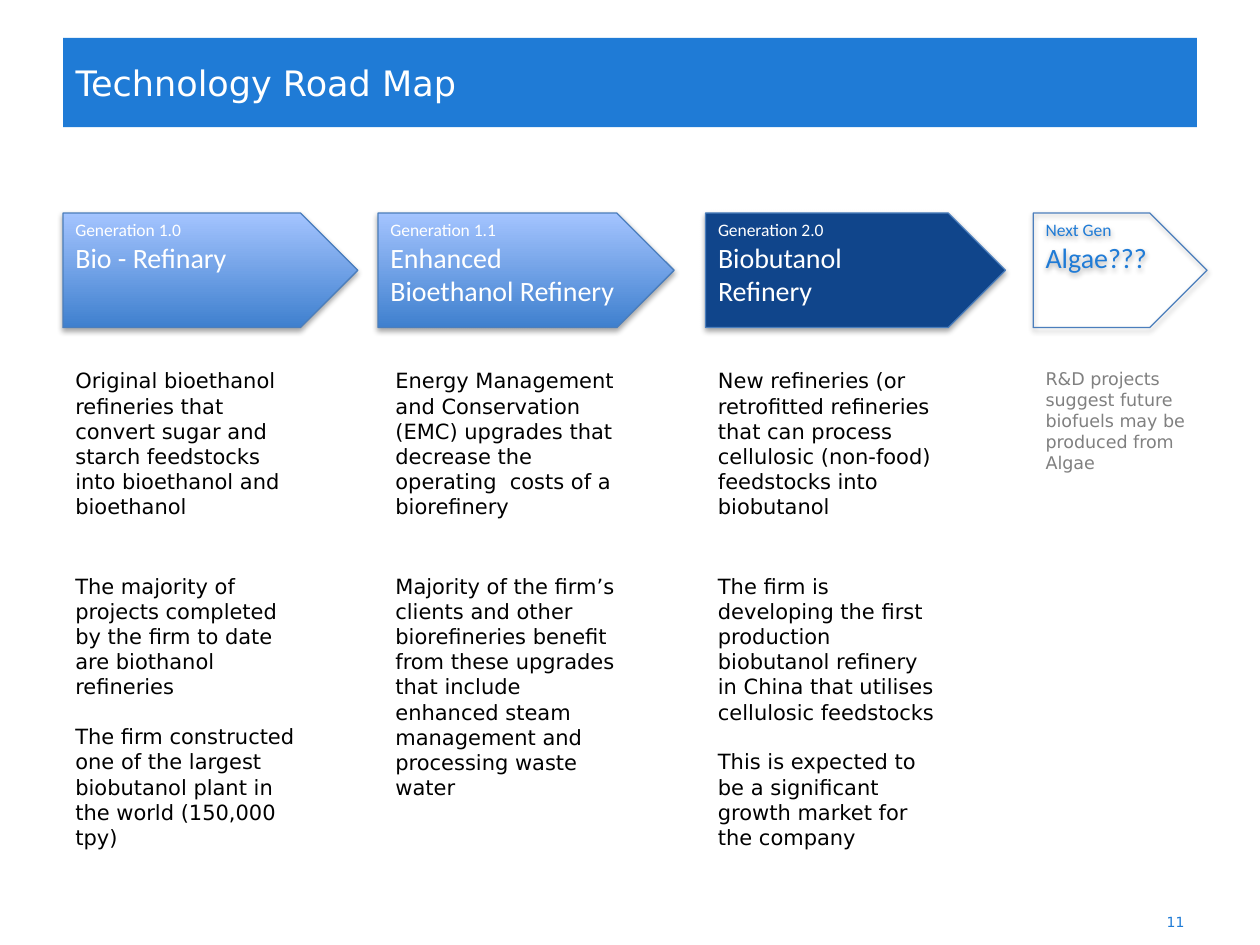
from lxml import etree
from pptx import Presentation
from pptx.dml.color import RGBColor
from pptx.enum import shapes, text
from pptx.oxml import ns
from pptx.util import Inches, Pt

BLUE = RGBColor(0x1F, 0x7B, 0xD6)
NAVY = RGBColor(0x10, 0x45, 0x8B)
OUTLINE = RGBColor(0x4B, 0x7E, 0xBC)
GRADIENT = (RGBColor(0x3F, 0x80, 0xCE), RGBColor(0xA4, 0xC4, 0xFF))
WHITE = RGBColor(0xFF, 0xFF, 0xFF)
BLACK = RGBColor(0, 0, 0)
GREY = RGBColor(0x80, 0x80, 0x80)

BODY_FONT = "DejaVu Sans"
ARROW_FONT = "Calibri"

ARROW_TOP, ARROW_HEIGHT = 1.69, 0.91
DESCRIPTION_TOP, STATUS_TOP = 2.87, 4.5

# left, arrow width, fill, text colour, arrow lines
ARROWS = [
    (0.5, 2.34, GRADIENT, WHITE, ["Generation 1.0", "Bio - Refinary"]),
    (3, 2.35, GRADIENT, WHITE,
     ["Generation 1.1", "Enhanced ", "Bioethanol Refinery"]),
    (5.6, 2.38, NAVY, WHITE, ["Generation 2.0", "Biobutanol", "Refinery"]),
    (8.2, 1.38, None, BLUE, ["Next Gen", "Algae???"]),
]

# left, description, status paragraphs
COLUMNS = [
    (0.5,
     "Original bioethanol refineries that convert sugar and starch "
     "feedstocks into bioethanol and bioethanol",
     ["The majority of projects completed by the firm to date are biothanol "
      "refineries",
      "The firm constructed one of the largest biobutanol plant in the world "
      "(150,000 tpy)"]),
    (3.04,
     "Energy Management and Conservation (EMC) upgrades that decrease the "
     "operating  costs of a biorefinery",
     ["Majority of the firm’s clients and other biorefineries benefit from "
      "these upgrades that include enhanced steam management and processing "
      "waste water"]),
    (5.6,
     "New refineries (or retrofitted refineries that can process cellulosic "
     "(non-food) feedstocks into biobutanol",
     ["The firm is developing the first production biobutanol refinery in "
      "China that utilises cellulosic feedstocks",
      "This is expected to be a significant growth market for the company"]),
]


def style_paragraph(paragraph, size, color, font=BODY_FONT,
                    align=text.PP_ALIGN.LEFT):
    paragraph.alignment = align
    paragraph.font.size = Pt(size)
    paragraph.font.name = font
    paragraph.font.color.rgb = color


def add_title(slide, left, top, width, height):
    title = slide.shapes.title
    title.left, title.top = Inches(left), Inches(top)
    title.width, title.height = Inches(width), Inches(height)
    title.fill.solid()
    title.fill.fore_color.rgb = BLUE
    frame = title.text_frame
    frame.text = "Technology Road Map"
    frame.auto_size = text.MSO_AUTO_SIZE.NONE
    frame.vertical_anchor = text.MSO_ANCHOR.MIDDLE
    style_paragraph(frame.paragraphs[0], 20, WHITE)


def add_soft_shadow(shape):
    shape.shadow.inherit = False
    effects = shape._element.spPr.find(ns.qn("a:effectLst"))
    shadow = etree.SubElement(effects, ns.qn("a:outerShdw"), blurRad="40000",
                              dist="23000", dir="5400000", rotWithShape="0")
    color = etree.SubElement(shadow, ns.qn("a:srgbClr"), val="000000")
    etree.SubElement(color, ns.qn("a:alpha"), val="35000")


def fill_arrow(fill, colors):
    """Fill with a gradient for a pair of colours, else solid or none."""
    if colors is None:
        fill.background()
    elif colors is GRADIENT:
        fill.gradient()
        fill.gradient_angle = 90
        for stop, color, position in zip(fill.gradient_stops, colors, (0, 1)):
            stop.color.rgb = color
            stop.position = position
    else:
        fill.solid()
        fill.fore_color.rgb = colors


def add_arrow(slide, left, width, fill, color, lines):
    arrow = slide.shapes.add_shape(
        shapes.MSO_SHAPE.PENTAGON, Inches(left), Inches(ARROW_TOP),
        Inches(width), Inches(ARROW_HEIGHT))
    fill_arrow(arrow.fill, fill)
    arrow.line.color.rgb = OUTLINE
    arrow.line.width = Pt(0.75)
    add_soft_shadow(arrow)
    frame = arrow.text_frame
    frame.vertical_anchor = text.MSO_ANCHOR.TOP
    frame.text = "\n".join(lines)
    for index, paragraph in enumerate(frame.paragraphs):
        style_paragraph(paragraph, 16 if index else 10, color, ARROW_FONT)


def add_text(slide, left, top, width, height, paragraphs, size=12,
             color=BLACK, align=text.PP_ALIGN.LEFT,
             anchor=text.MSO_ANCHOR.TOP):
    box = slide.shapes.add_textbox(Inches(left), Inches(top), Inches(width),
                                   Inches(height))
    frame = box.text_frame
    frame.word_wrap = True
    frame.vertical_anchor = anchor
    frame.text = "\n".join(paragraphs)
    for index, paragraph in enumerate(frame.paragraphs):
        style_paragraph(paragraph, size, color, align=align)
        if index:
            paragraph.space_before = Pt(14)


def main():
    presentation = Presentation()
    presentation.slide_width = Inches(10)
    presentation.slide_height = Inches(7.5)
    slide = presentation.slides.add_slide(presentation.slide_layouts[5])

    add_title(slide, 0.5, 0.3, 9, 0.71)
    for arrow in ARROWS:
        add_arrow(slide, *arrow)
    for left, description, status in COLUMNS:
        add_text(slide, left, DESCRIPTION_TOP, 1.96, 1.31, [description])
        add_text(slide, left, STATUS_TOP, 1.96, 2.12, status)
    add_text(slide, 8.2, DESCRIPTION_TOP, 1.38, 0.94,
             ["R&D projects suggest future biofuels may be produced from "
              "Algae"], size=10, color=GREY)
    add_text(slide, 7.17, 7.12, 2.33, 0.4, ["11"], size=8, color=BLUE,
             align=text.PP_ALIGN.RIGHT, anchor=text.MSO_ANCHOR.MIDDLE)

    presentation.save("out.pptx")


if __name__ == "__main__":
    main()
